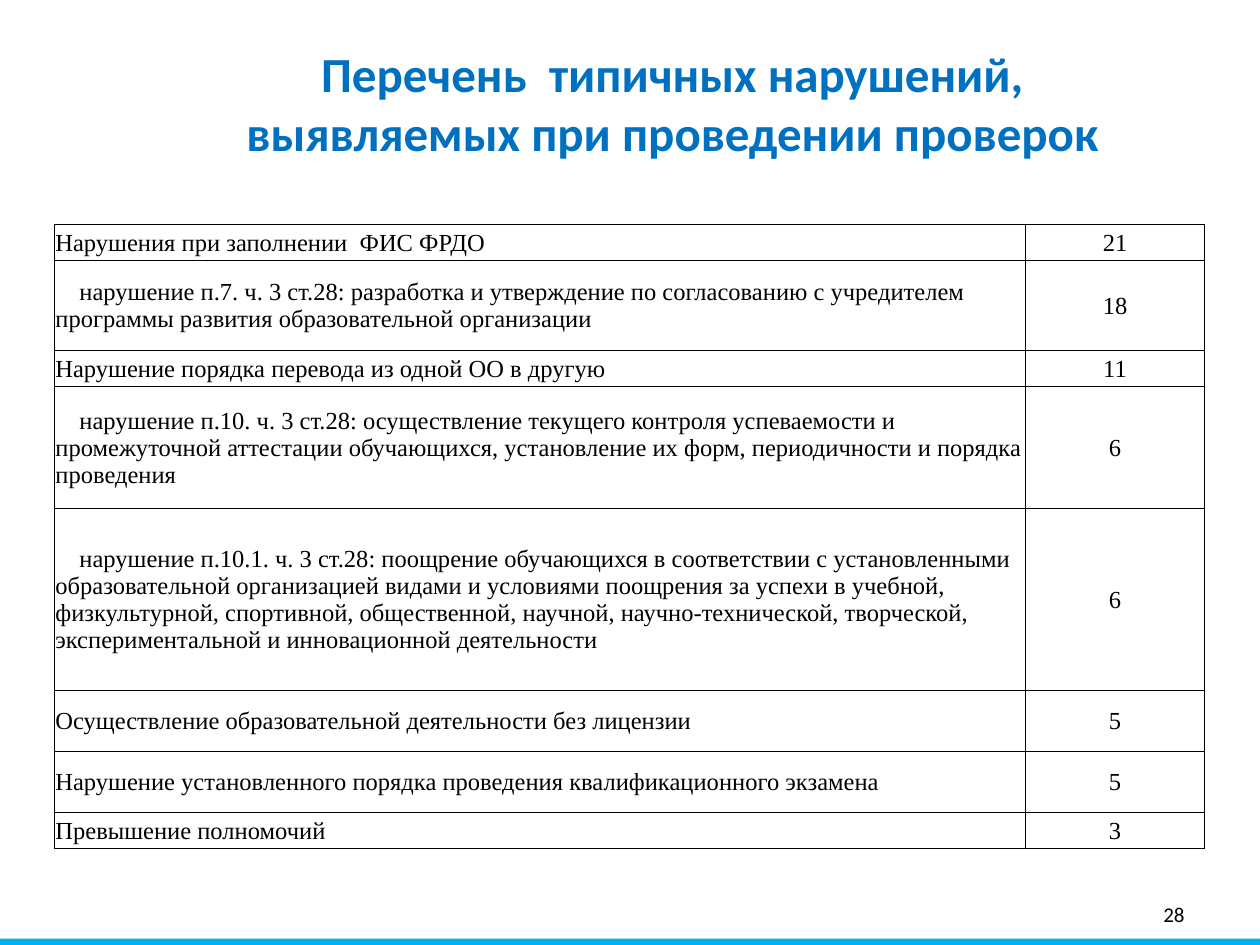
from lxml import etree
from pptx import Presentation
from pptx.dml.color import RGBColor
from pptx.enum.shapes import MSO_SHAPE
from pptx.enum.text import MSO_ANCHOR, MSO_AUTO_SIZE, PP_ALIGN
from pptx.oxml.ns import qn
from pptx.util import Inches, Pt

RECTANGLE = MSO_SHAPE.RECTANGLE
TOP, MIDDLE = MSO_ANCHOR.TOP, MSO_ANCHOR.MIDDLE
LEFT, CENTER, RIGHT = PP_ALIGN.LEFT, PP_ALIGN.CENTER, PP_ALIGN.RIGHT
GROW = MSO_AUTO_SIZE.SHAPE_TO_FIT_TEXT

ROW_UNIT = Inches(0.24)
violations = [
    ("Нарушения при заполнении  ФИС ФРДО", 21, 1.18, False),
    ("нарушение п.7. ч. 3 ст.28: разработка и утверждение по согласованию с учредителем "
     "программы развития образовательной организации", 18, 3, True),
    ("Нарушение порядка перевода из одной ОО в другую", 11, 1.18, False),
    ("нарушение п.10. ч. 3 ст.28: осуществление текущего контроля успеваемости и "
     "промежуточной аттестации обучающихся, установление их форм, периодичности и "
     "порядка проведения", 6, 4.03, True),
    ("нарушение п.10.1. ч. 3 ст.28: поощрение обучающихся в соответствии с установленными "
     "образовательной организацией видами и условиями поощрения за успехи в учебной, "
     "физкультурной, спортивной, общественной, научной, научно-технической, творческой, "
     "экспериментальной и инновационной деятельности", 6, 6.03, True),
    ("Осуществление образовательной деятельности без лицензии", 5, 2.02, False),
    ("Нарушение установленного порядка проведения квалификационного экзамена", 5, 2.02, False),
    ("Превышение полномочий", 3, 1.18, False),
]


def rgb(code):
    return RGBColor.from_string(code)


def write(frame, text, align, color="000000", **font_format):
    frame.text = text
    paragraph = frame.paragraphs[0]
    paragraph.alignment = align
    font = paragraph.runs[0].font
    for name, value in font_format.items():
        setattr(font, name, value)
    font.color.rgb = rgb(color)
    return paragraph


deck = Presentation()
deck.slide_width, deck.slide_height = Inches(10), Inches(7.5)
W, H = deck.slide_width, deck.slide_height
slide = deck.slides.add_slide(deck.slide_layouts[5])

footer_band = slide.shapes.add_shape(RECTANGLE, 0, int(H * 0.9933), W, int(H * 0.0067))
footer_band.shadow.inherit = False
footer_band.fill.solid()
footer_band.fill.fore_color.rgb = rgb("00B0F0")
footer_band.line.fill.background()

page_number = slide.shapes.add_textbox(int(W * 0.717), int(H * 0.941), int(W * 0.233), int(H * 0.053))
page_number.text_frame.word_wrap = True
page_number.text_frame.vertical_anchor = MIDDLE
write(page_number.text_frame, "28", RIGHT, name="Calibri", size=Pt(12))

heading = slide.shapes.title
heading_place = {"left": W * 0.173, "top": H * 0.039, "width": W * 0.721, "height": H * 0.139}
for side, length in heading_place.items():
    setattr(heading, side, int(length))
for name, value in {"word_wrap": True, "auto_size": GROW, "vertical_anchor": TOP}.items():
    setattr(heading.text_frame, name, value)
write(heading.text_frame, "Перечень  типичных нарушений, выявляемых при проведении проверок",
      CENTER, "0070C0", name="Calibri", size=Pt(28), bold=True)

table_height = int(sum(units for _, _, units, _ in violations) * ROW_UNIT)
table = slide.shapes.add_table(len(violations), 2, int(W * 0.043), int(H * 0.2373),
                               int(W * 0.913), table_height).table
table.first_row = table.horz_banding = False
table.columns[0].width, table.columns[1].width = int(W * 0.771), int(W * 0.142)

cell_format = {"vertical_anchor": MIDDLE, "margin_left": Inches(0.01), "margin_right": Inches(0.01),
               "margin_top": Inches(0.01), "margin_bottom": 0}
for row, (violation, count, units, indented) in enumerate(violations):
    table.rows[row].height = int(units * ROW_UNIT)
    for column, (text, align) in enumerate([(violation, LEFT), (str(count), CENTER)]):
        cell = table.cell(row, column)
        for name, value in cell_format.items():
            setattr(cell, name, value)
        paragraph = write(cell.text_frame, text, align, name="Times New Roman", size=Pt(14))
        if indented and column == 0:
            properties = paragraph._p.get_or_add_pPr()
            properties.set("marL", "0")
            properties.set("indent", str(Inches(0.19)))
        cell_properties = cell._tc.get_or_add_tcPr()
        for edge in ("a:lnL", "a:lnR", "a:lnT", "a:lnB"):
            border = etree.SubElement(cell_properties, qn(edge), w=str(Pt(0.5)))
            paint = etree.SubElement(border, qn("a:solidFill"))
            etree.SubElement(paint, qn("a:srgbClr"), val="000000")
        cell.fill.background()

deck.save("out.pptx")
